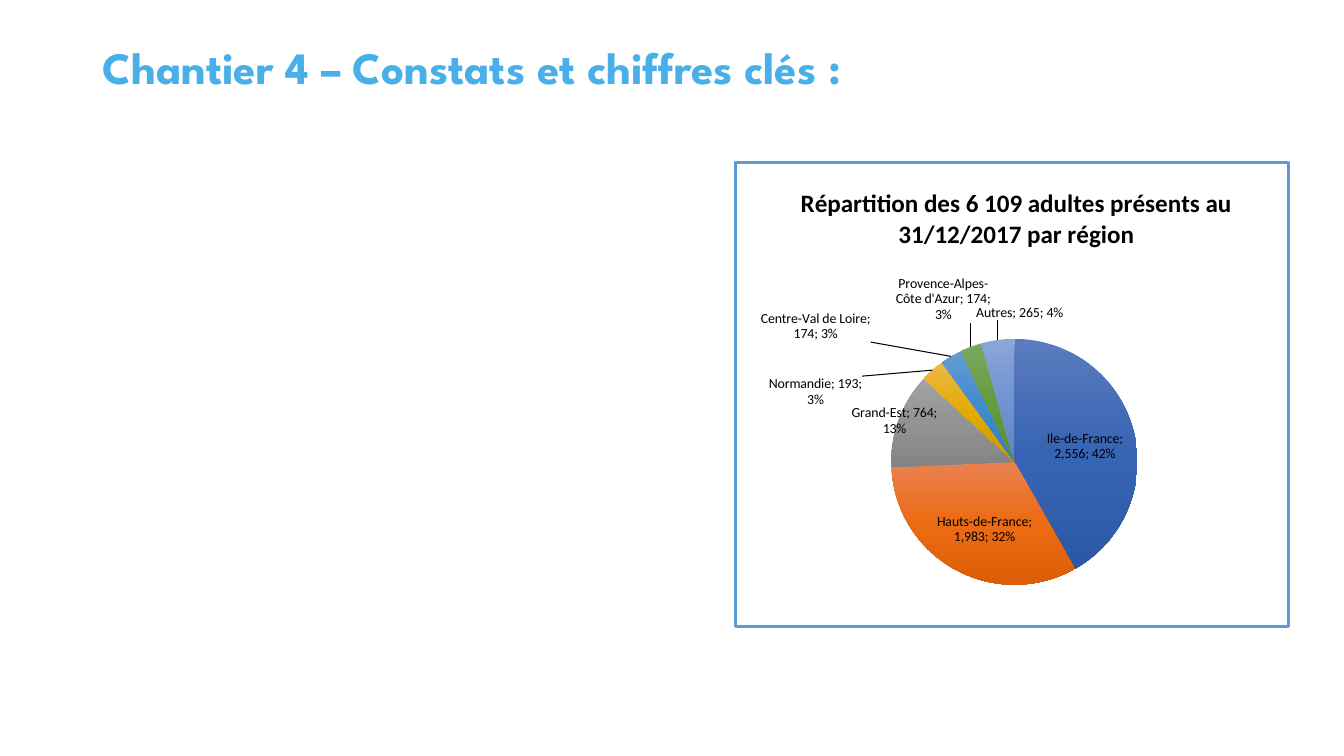
from pptx import Presentation
from pptx.chart.data import CategoryChartData
from pptx.dml.color import RGBColor
from pptx.enum.chart import XL_CHART_TYPE as ChartType
from pptx.enum.text import MSO_ANCHOR
from pptx.oxml import parse_xml
from pptx.oxml.ns import nsdecls
from pptx.util import Inches, Pt

COLORS = {
    "title": "48AFE9", "text": "000000", "border": "5B9BD5",
    "blue": "4472C4", "orange": "ED7D31", "gray": "A5A5A5",
    "gold": "FFC000", "sky": "5B9BD5", "green": "70AD47",
}

# Region, adults, colour, label position, label shift (share of chart size)
REGIONS = [
    ("Ile-de-France", 2556, "blue", "ctr", (0.02, 0)),
    ("Hauts-de-France", 1983, "orange", "ctr", (0, 0.03)),
    ("Grand-Est", 764, "gray", "outEnd", (0.08, 0.04)),
    ("Normandie", 193, "gold", "outEnd", (-0.12, 0.09)),
    ("Centre-Val de Loire", 174, "sky", "outEnd", (-0.14, -0.02)),
    ("Provence-Alpes-Côte d'Azur", 174, "green", "outEnd", (0.04, -0.04)),
    ("Autres", 265, "blue", "outEnd", (0.12, -0.03)),
]
NARROW = "Centre-Val de Loire"  # label that breaks after "de"

# Gradient stops: position and colour changes, in thousandths of a percent
STOPS = [
    (0, {"satMod": 96000, "lumMod": 94000, "tint": 94000}),
    (50000, {"satMod": 102000, "lumMod": 89000}),
    (100000, {"lumMod": 89000, "satMod": 110000, "shade": 78000}),
]
LIGHTER = '<a:lumMod val="60000"/><a:lumOff val="40000"/>'
SHOW = ('<c:showLegendKey val="0"/><c:showVal val="1"/><c:showCatName val="1"/>'
        '<c:showSerName val="0"/><c:showPercent val="1"/><c:showBubbleSize val="0"/>'
        '<c:separator>; </c:separator>')
LABEL_SIZE = (
    '<c:extLst><c:ext uri="{CE6537A1-D6FC-4f65-9D91-7224C49458BB}" '
    'xmlns:c15="http://schemas.microsoft.com/office/drawing/2012/chart">'
    '<c15:layout><c:manualLayout><c:w val="0.16"/><c:h val="0.08"/>'
    '</c:manualLayout></c15:layout></c:ext></c:extLst>')
EDGE = '<c:xMode val="edge"/><c:yMode val="edge"/>'


def rgb(name):
    return RGBColor.from_string(COLORS[name])


def set_font(font, color, **values):
    for key, value in values.items():
        setattr(font, key, value)
    font.color.rgb = rgb(color)


def layout(x, y, size="", target=""):
    return (f'<c:layout {nsdecls("c")}><c:manualLayout>{target}'
            f'<c:x val="{x}"/><c:y val="{y}"/>{size}</c:manualLayout></c:layout>')


def gradient(color, extra):
    stops = ""
    for pos, changes in STOPS:
        mods = "".join(f'<a:{k} val="{v}"/>' for k, v in changes.items())
        stops += (f'<a:gs pos="{pos}"><a:srgbClr val="{COLORS[color]}">'
                  f'{extra}{mods}</a:srgbClr></a:gs>')
    return parse_xml(f'<a:gradFill {nsdecls("a")} rotWithShape="1"><a:gsLst>{stops}'
                     '</a:gsLst><a:lin ang="5400000" scaled="0"/></a:gradFill>')


def label_xml():
    labels = ""
    for i, (name, _, _, place, shift) in enumerate(REGIONS):
        size = LABEL_SIZE if name == NARROW else ""
        labels += (f'<c:dLbl><c:idx val="{i}"/>{layout(*shift)}'
                   f'<c:dLblPos val="{place}"/>{SHOW}{size}</c:dLbl>')
    return parse_xml(
        f'<c:dLbls {nsdecls("c", "a")}>{labels}'
        f'<c:dLblPos val="outEnd"/>{SHOW}<c:showLeaderLines val="1"/>'
        '<c:leaderLines><c:spPr><a:ln w="9525"><a:solidFill>'
        f'<a:srgbClr val="{COLORS["text"]}"/></a:solidFill></a:ln></c:spPr>'
        '</c:leaderLines></c:dLbls>')


def add_title(s, x, y, w, h):
    tf = s.shapes.add_textbox(Inches(x), Inches(y), Inches(w), Inches(h)).text_frame
    tf.word_wrap = True
    tf.vertical_anchor = MSO_ANCHOR.TOP
    p = tf.paragraphs[0]
    p.line_spacing = 0.9
    r = p.add_run()
    r.text = "Chantier 4 – Constats et chiffres clés :"
    set_font(r.font, "title", name="League Spartan", size=Pt(32), bold=True)


def add_region_pie(s, x, y, w, h):
    data = CategoryChartData(number_format="#,##0")
    data.categories = [region[0] for region in REGIONS]
    data.add_series("Series 1", [region[1] for region in REGIONS])
    chart = s.shapes.add_chart(ChartType.PIE, Inches(x), Inches(y),
                               Inches(w), Inches(h), data).chart
    chart.has_legend = False
    set_font(chart.font, "text", name="Calibri", size=Pt(10))

    # Heading
    chart.has_title = True
    tf = chart.chart_title.text_frame
    tf.text = "Répartition des 6 109 adultes présents au 31/12/2017 par région"
    set_font(tf.paragraphs[0].runs[0].font, "text",
             name="Calibri", size=Pt(18), bold=True)
    heading = chart.chart_title._element
    for node in heading.findall("{*}layout"):
        heading.remove(node)
    heading.find("{*}tx").addnext(parse_xml(layout(0.11, 0.04, target=EDGE)))

    # Slices
    plot = chart.plots[0]
    plot.vary_by_categories = True
    series = plot.series[0]
    for i, region in enumerate(REGIONS):
        fmt = series.points[i].format
        fmt.line.fill.background()
        extra = LIGHTER if region[0] == "Autres" else ""
        fmt.line._ln.addprevious(gradient(region[2], extra))

    # Labels
    old = series.data_labels._element
    old.getparent().replace(old, label_xml())
    set_font(series.data_labels.font, "text", name="Calibri", size=Pt(10))

    # Pie position inside the frame
    area = chart._chartSpace.chart.plotArea
    for node in area.findall("{*}layout"):
        area.remove(node)
    area.insert(0, parse_xml(layout(
        0.28, 0.38, '<c:w val="0.45"/><c:h val="0.53"/>',
        f'<c:layoutTarget val="inner"/>{EDGE}')))

    # Frame
    frame = parse_xml(
        f'<c:spPr {nsdecls("c", "a")}><a:noFill/><a:ln w="{Pt(2)}"><a:solidFill>'
        f'<a:srgbClr val="{COLORS["border"]}"/></a:solidFill></a:ln></c:spPr>')
    chart._chartSpace.chart.addnext(frame)


def main():
    prs = Presentation()
    prs.slide_width, prs.slide_height = Inches(13.33), Inches(7.5)
    s = prs.slides.add_slide(prs.slide_layouts[6])
    add_title(s, 0.92, 0.4, 11.5, 1.45)
    add_region_pie(s, 7.28, 1.6, 5.51, 4.63)
    prs.save("out.pptx")


if __name__ == "__main__":
    main()
